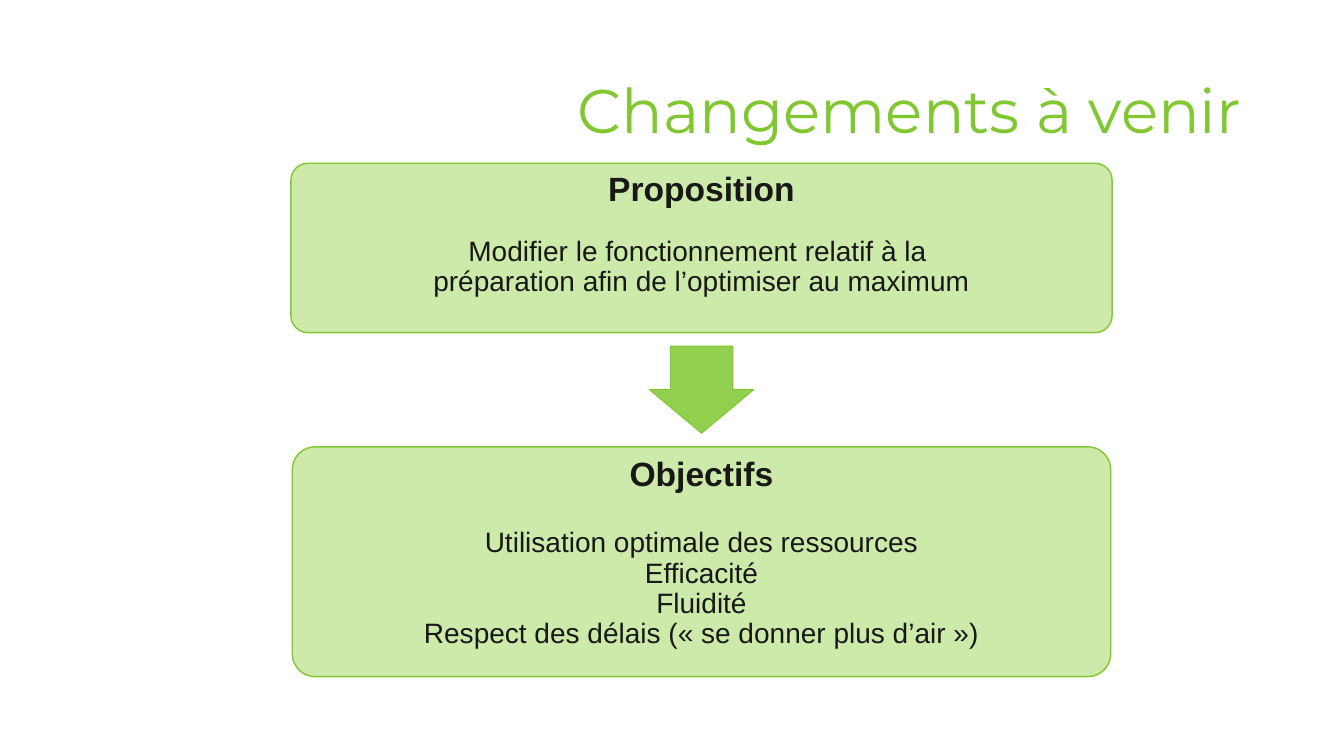
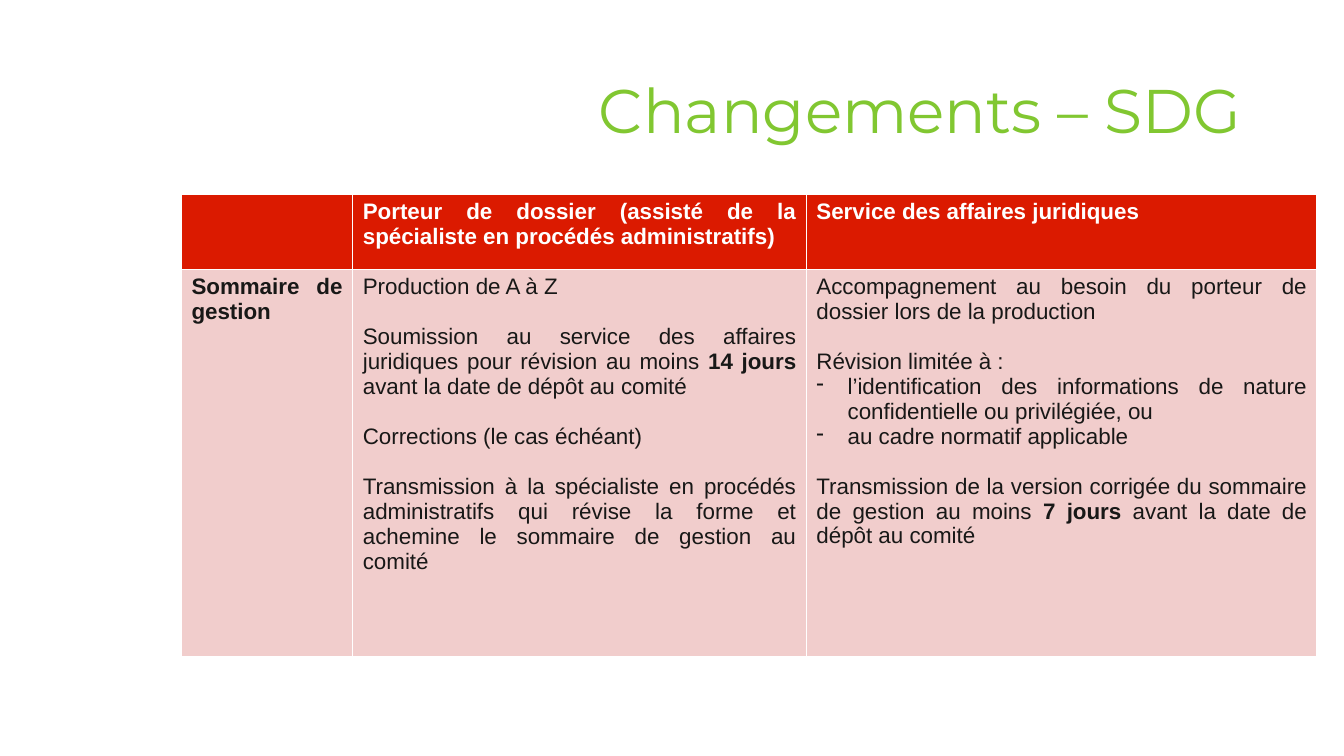
import pptx
import pptx.dml.color
import pptx.enum.shapes
import pptx.enum.text
import pptx.oxml.ns
import pptx.util
from lxml import etree

COLOURS = {
    "title": "81C731",
    "panel": "CDEAAB",
    "arrow": "92D050",
    "ink": "181817",
    "header": "DB1A00",
    "header_ink": "FFFFFF",
    "row": "F1CDCC",
}
ALIGN = pptx.enum.text.PP_ALIGN
ANCHOR = pptx.enum.text.MSO_ANCHOR
SHAPE = pptx.enum.shapes.MSO_SHAPE


class Deck:
    body_font = "Arial"
    title_font = "Montserrat"
    title_area = (14.55, 5.33, 78.6, 19.33)

    def __init__(self):
        self.show = pptx.Presentation()
        self.show.slide_width = pptx.util.Inches(13.333)
        self.show.slide_height = pptx.util.Inches(7.5)
        self.slide = None

    def x(self, share):
        return round(self.show.slide_width * share / 100)

    def y(self, share):
        return round(self.show.slide_height * share / 100)

    def area(self, left, top, width, height):
        return self.x(left), self.y(top), self.x(width), self.y(height)

    def colour(self, name):
        return pptx.dml.color.RGBColor.from_string(COLOURS[name])

    def fill(self, target, name):
        target.fill.solid()
        target.fill.fore_color.rgb = self.colour(name)

    def style(self, paragraph, size, ink="ink", bold=False, face=body_font):
        font = paragraph.font
        font.name, font.size, font.bold = face, pptx.util.Pt(size), bold
        font.color.rgb = self.colour(ink)

    def paragraphs(self, frame, count):
        return [frame.paragraphs[0]] + [frame.add_paragraph() for _ in range(count - 1)]

    def new_slide(self, title):
        self.slide = self.show.slides.add_slide(self.show.slide_layouts[5])
        heading = self.slide.shapes.title
        heading.left, heading.top, heading.width, heading.height = self.area(*self.title_area)
        frame = heading.text_frame
        frame.text = title
        frame.vertical_anchor = ANCHOR.MIDDLE
        frame.auto_size = pptx.enum.text.MSO_AUTO_SIZE.NONE
        paragraph = frame.paragraphs[0]
        paragraph.alignment, paragraph.line_spacing = ALIGN.RIGHT, 0.9
        self.style(paragraph, 44, "title", face=self.title_font)

    def shape(self, preset, area, fill, line_width, adjustments):
        shape = self.slide.shapes.add_shape(preset, *self.area(*area))
        shape.shadow.inherit = False
        self.fill(shape, fill)
        shape.line.color.rgb = self.colour("title")
        shape.line.width = pptx.util.Pt(line_width)
        for index, value in enumerate(adjustments):
            shape.adjustments[index] = value
        return shape

    def panel(self, area, heading, lines, gap):
        frame = self.shape(SHAPE.ROUNDED_RECTANGLE, area, "panel", 1, [0.1]).text_frame
        frame.word_wrap = True
        frame.vertical_anchor = ANCHOR.TOP
        frame.margin_top = pptx.util.Inches(0.04)
        texts = [heading, *lines]
        for index, paragraph in enumerate(self.paragraphs(frame, len(texts))):
            paragraph.text = texts[index]
            paragraph.alignment, paragraph.line_spacing = ALIGN.CENTER, 0.9
            if index == 1:
                paragraph.space_before = pptx.util.Pt(gap)
            self.style(paragraph, 20 if index else 24, bold=index == 0)

    def down_arrow(self, area):
        self.shape(SHAPE.DOWN_ARROW, area, "arrow", 0.75, [0.6, 0.5])

    def dash(self, paragraph):
        properties = paragraph._p.get_or_add_pPr()
        indent = pptx.util.Inches(0.31)
        properties.set("marL", str(indent))
        properties.set("indent", str(-indent))
        etree.SubElement(properties, pptx.oxml.ns.qn("a:buChar")).set("char", "-")

    def cell(self, cell, texts, fill, ink, bold):
        self.fill(cell, fill)
        for index, paragraph in enumerate(self.paragraphs(cell.text_frame, len(texts))):
            text = texts[index]
            paragraph.alignment = ALIGN.JUSTIFY
            if text.startswith("- "):
                text = text[2:]
                self.dash(paragraph)
            elif index:
                paragraph.space_before = pptx.util.Pt(18)
            self.style(paragraph, 16, ink, bold)
            for position, piece in enumerate(text.split("*")):
                run = paragraph.add_run()
                run.text = piece
                if position % 2:
                    run.font.bold = True

    def table(self, left, top, widths, heights, rows):
        area = self.area(left, top, sum(widths), sum(heights))
        table = self.slide.shapes.add_table(len(heights), len(widths), *area).table
        table.horz_banding = False
        for column, width in zip(table.columns, widths):
            column.width = self.x(width)
        for row, height in zip(table.rows, heights):
            row.height = self.y(height)
        for r, row in enumerate(rows):
            fill, ink = ("row", "ink") if r else ("header", "header_ink")
            for c, texts in enumerate(row):
                self.cell(table.cell(r, c), texts, fill, ink, r == 0 or c == 0)


def changes_ahead(deck):
    deck.new_slide("Changements à venir")
    axis, top, gap = 52.2, 21.6, 1.8
    steps = [
        (61.1, 22.4, deck.panel, ("Proposition", [
            "Modifier le fonctionnement relatif à la ",
            "préparation afin de l’optimiser au maximum",
        ], 20.7)),
        (7.75, 11.5, deck.down_arrow, ()),
        (60.9, 30.4, deck.panel, ("Objectifs", [
            "Utilisation optimale des ressources",
            "Efficacité",
            "Fluidité",
            "Respect des délais (« se donner plus d’air »)",
        ], 24.8)),
    ]
    for width, height, draw, content in steps:
        draw((axis - width / 2, top, width, height), *content)
        top += height + gap


def summary_changes(deck):
    deck.new_slide("Changements – SDG")
    deck.table(13.5, 25.75, [12.75, 33.75, 38], [9.87, 51.2], [
        [
            [""],
            ["Porteur de dossier (assisté de la spécialiste en procédés administratifs)"],
            ["Service des affaires juridiques"],
        ],
        [
            ["Sommaire de gestion"],
            [
                "Production de A à Z",
                "Soumission au service des affaires juridiques pour révision au moins "
                "*14 jours* avant la date de dépôt au comité",
                "Corrections (le cas échéant)",
                "Transmission à la spécialiste en procédés administratifs qui révise "
                "la forme et achemine le sommaire de gestion au comité",
            ],
            [
                "Accompagnement au besoin du porteur de dossier lors de la production",
                "Révision limitée à :",
                "- l’identification des informations de nature confidentielle ou privilégiée, ou ",
                "- au cadre normatif applicable",
                "Transmission de la version corrigée du sommaire de gestion au moins "
                "*7 jours* avant la date de dépôt au comité",
            ],
        ],
    ])


def main():
    deck = Deck()
    changes_ahead(deck)
    summary_changes(deck)
    deck.show.save("out.pptx")


if __name__ == "__main__":
    main()
